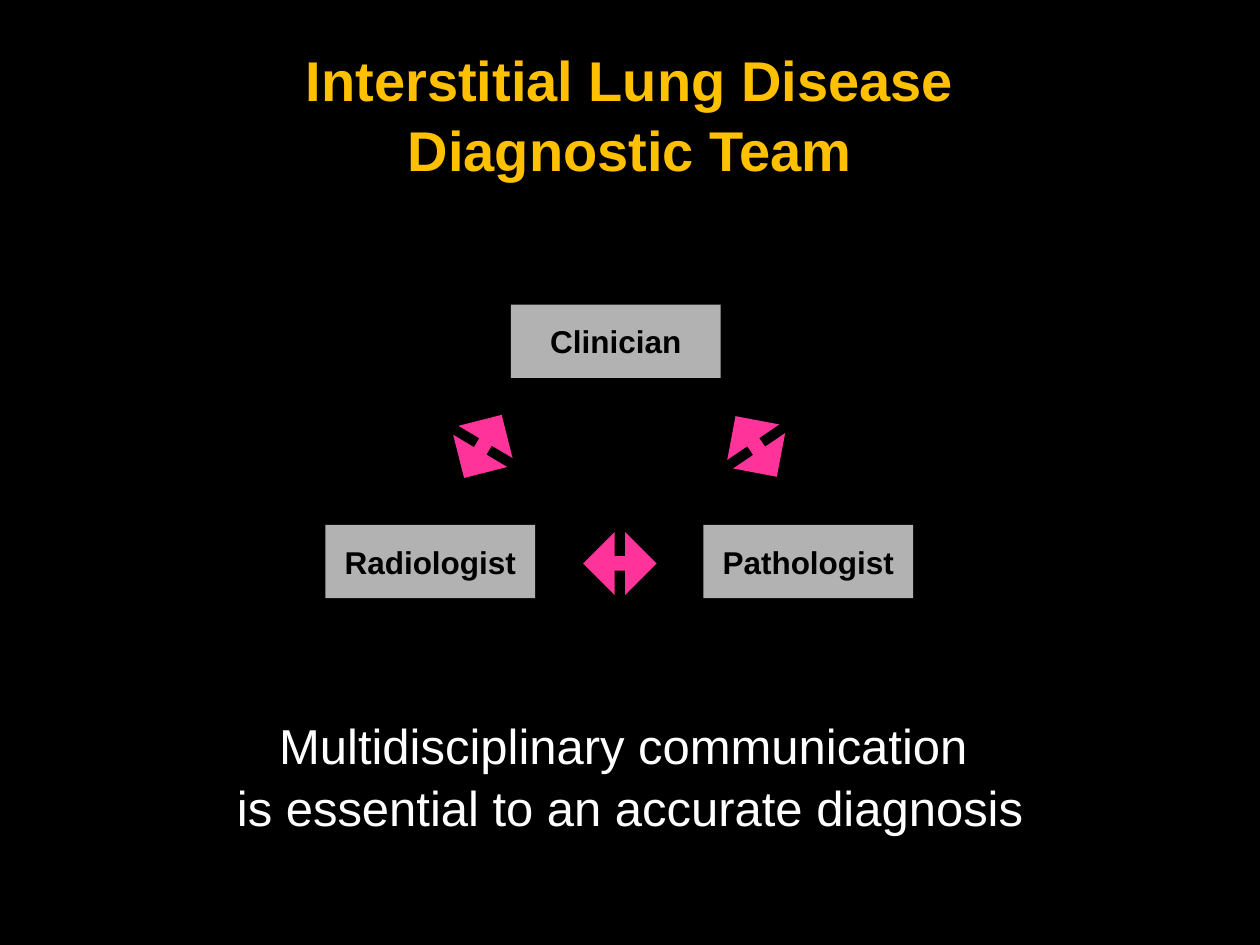
from pptx import Presentation
from pptx.dml.color import RGBColor
from pptx.enum.shapes import MSO_SHAPE
from pptx.enum.text import MSO_ANCHOR, PP_ALIGN
from pptx.util import Cm, Pt

RECT = MSO_SHAPE.RECTANGLE
ARROW = MSO_SHAPE.UP_DOWN_ARROW
MIDDLE = MSO_ANCHOR.MIDDLE
CENTER = PP_ALIGN.CENTER


def paint(fill, color):
    fill.solid()
    fill.fore_color.rgb = RGBColor.from_string(color)


def write(para, text, size, color, bold=False):
    """Add one centred run; a newline in the text becomes a line break."""
    para.alignment = CENTER
    for i, line in enumerate(text.split("\n")):
        if i:
            para.add_line_break()
        run = para.add_run()
        run.text = line
        run.font.name = "Arial"
        run.font.size = Pt(size)
        run.font.bold = bold
        paint(run.font.fill, color)


prs = Presentation()
prs.slide_width, prs.slide_height = Cm(25.4), Cm(19.05)
slide = prs.slides.add_slide(prs.slide_layouts[6])
shapes = slide.shapes
paint(slide.background.fill, "000000")

# Title
frame = shapes.add_textbox(Cm(0), Cm(0.64), Cm(25.4), Cm(3.18)).text_frame
frame.word_wrap = True
frame.vertical_anchor = MIDDLE
frame.margin_top = Cm(0.2)
title = frame.paragraphs[0]
title.line_spacing = 1.05
write(title, "Interstitial Lung Disease\nDiagnostic Team", 32, "FFC000", True)

# Message
frame = shapes.add_textbox(Cm(1.9), Cm(14.17), Cm(21.6), Cm(2.82)).text_frame
frame.word_wrap = True
frame.margin_top = Cm(0.2)
lines = ["Multidisciplinary communication ", "is essential to an accurate diagnosis"]
for i, line in enumerate(lines):
    para = frame.add_paragraph() if i else frame.paragraphs[0]
    para.line_spacing = 1.05
    write(para, line, 28, "FFFFFF")

# Team members
team = [("Clinician", 10.3, 6.14), ("Radiologist", 6.56, 10.58), ("Pathologist", 14.18, 10.58)]
for name, left, top in team:
    box = shapes.add_shape(RECT, Cm(left), Cm(top), Cm(4.23), Cm(1.48))
    box.shadow.inherit = False
    paint(box.fill, "B2B2B2")
    box.line.fill.background()
    box.text_frame.word_wrap = False
    box.text_frame.vertical_anchor = MIDDLE
    write(box.text_frame.paragraphs[0], name, 18, "000000", True)

# Arrows between them
for left, top, turn in [(9.1, 8.26, 30.8), (14.61, 8.26, 325.7), (11.86, 10.62, 90)]:
    arrow = shapes.add_shape(ARROW, Cm(left), Cm(top), Cm(1.27), Cm(1.48))
    arrow.adjustments[0] = 0.5
    arrow.adjustments[1] = 0.23
    arrow.rotation = turn
    arrow.shadow.inherit = False
    paint(arrow.fill, "FF3399")
    arrow.line.fill.background()

prs.save("out.pptx")
